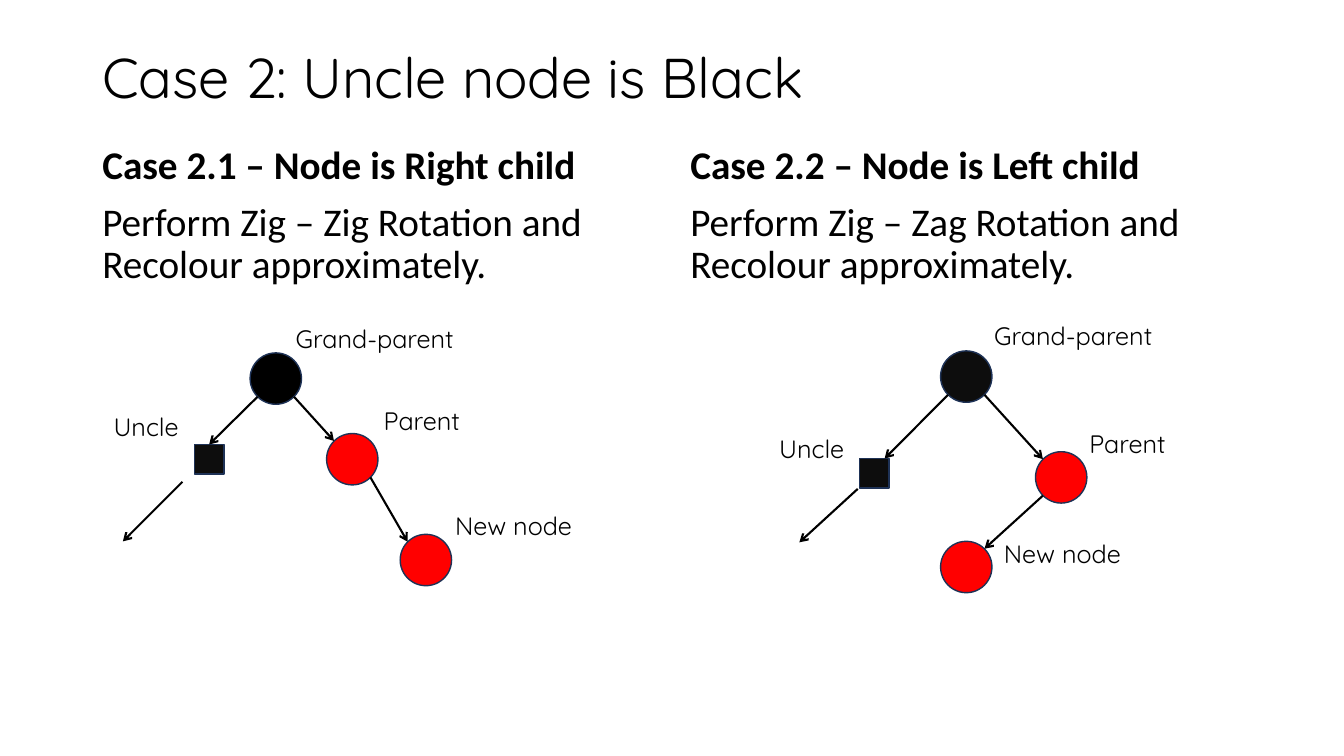
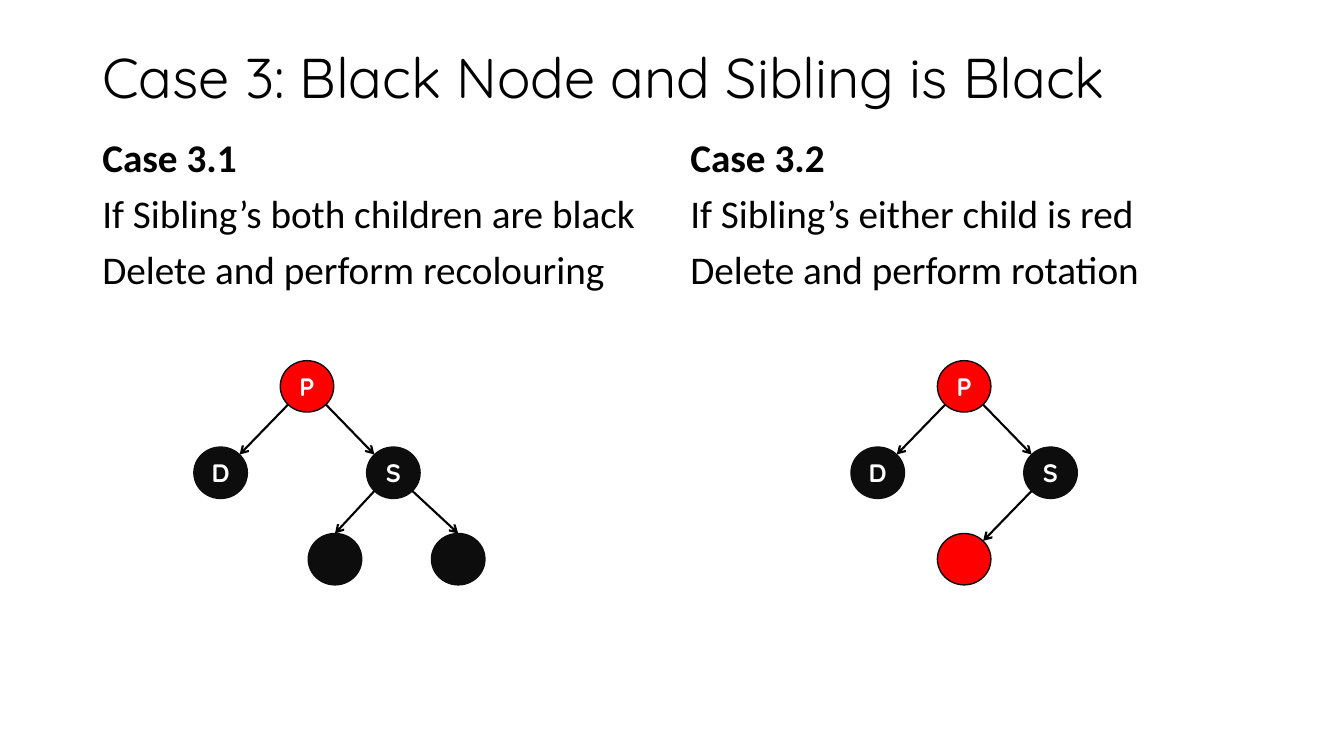
from lxml.etree import SubElement
from pptx import Presentation
from pptx.dml.color import RGBColor
from pptx.enum.shapes import MSO_CONNECTOR, MSO_SHAPE
from pptx.enum.text import MSO_ANCHOR, PP_ALIGN
from pptx.oxml.ns import qn
from pptx.util import Pt

COLORS = {"black": "000000", "ink": "0D0D0D", "red": "FF0000",
          "navy": "1E3256", "white": "FFFFFF"}
FONTS = {
    "title": {"name": "Quicksand", "size": Pt(40)},
    "head": {"name": "Calibri", "size": Pt(28), "bold": True},
    "body": {"name": "Calibri", "size": Pt(28), "bold": False},
    "label": {"name": "Quicksand", "size": Pt(18)},
    "letter": {"name": "Quicksand", "size": Pt(18), "bold": True},
}
COLUMNS = (66, 486)
COLUMN_WIDTH = 408
TREE_TOP = 216

# Where an arrow meets a node, in half sizes from its centre
SITES = {"N": (0, -1), "NNE": (0.7, -1), "NW": (-0.71, -0.71), "NE": (0.71, -0.71),
         "SW": (-0.71, 0.71), "SE": (0.71, 0.71)}
CIRCLE, SQUARE = (36.7, 36.7), (21, 21)
OVAL = (38.2, 36.7)
LABELS = {"grand": ("Grand-parent", 148), "parent": ("Parent", 114),
          "new": ("New node", 114), "uncle": ("Uncle", 95)}


def rgb(color):
    return RGBColor.from_string(COLORS[color])


def style(item, font, color="black", **layout):
    for key, value in layout.items():
        setattr(item, key, value)
    for key, value in FONTS[font].items():
        setattr(item.font, key, value)
    item.font.color.rgb = rgb(color)


def add_text(slide, box, lines, anchor=MSO_ANCHOR.TOP, **layout):
    """Place (text, font) lines in a box of left, top, width and height."""
    frame = slide.shapes.add_textbox(*map(Pt, box)).text_frame
    frame.word_wrap = True
    frame.vertical_anchor = anchor
    for i, (text, font) in enumerate(lines):
        line = frame.add_paragraph() if i else frame.paragraphs[0]
        line.text = text
        style(line, font, **layout)
        if i:
            line.space_before = Pt(10)


def add_node(slide, center, size, fill, edge, letter=""):
    (x, y), (w, h) = center, size
    kind = MSO_SHAPE.RECTANGLE if size == SQUARE else MSO_SHAPE.OVAL
    node = slide.shapes.add_shape(kind, Pt(x - w / 2), Pt(y - h / 2), Pt(w), Pt(h))
    node.shadow.inherit = False
    node.fill.solid()
    node.fill.fore_color.rgb = rgb(fill)
    node.line.color.rgb = rgb(edge)
    node.line.width = Pt(1)
    if letter:
        frame = node.text_frame
        for side in ("left", "top", "right", "bottom"):
            setattr(frame, f"margin_{side}", 0)
        frame.vertical_anchor = MSO_ANCHOR.MIDDLE
        frame.paragraphs[0].text = letter
        style(frame.paragraphs[0], "letter", "white", alignment=PP_ALIGN.CENTER)


def add_arrow(slide, start, end):
    line = slide.shapes.add_connector(MSO_CONNECTOR.STRAIGHT, *map(Pt, (*start, *end)))
    line.line.color.rgb = rgb("black")
    line.line.width = Pt(1.5)
    SubElement(line.line._get_or_add_ln(), qn("a:tailEnd"), type="arrow")
    SubElement(line._element.spPr, qn("a:effectLst"))


def add_tree(slide, left, top, nodes, links, edge):
    """Draw nodes {name: (x, y, size, fill, letter)} and the arrows between them."""
    def site(name, side):
        x, y, (w, h), *_ = nodes[name]
        dx, dy = SITES[side]
        return left + x + dx * w / 2, top + y + dy * h / 2

    for x, y, size, fill, letter in nodes.values():
        add_node(slide, (left + x, top + y), size, fill, edge, letter)
    for begin, out, end, into in links:
        add_arrow(slide, site(begin, out), site(end, into))


def insert_tree(slide, left, top, spots, links, loose):
    """Draw a labelled tree from {name: (x, y, fill, label x, label y)}."""
    nodes = {name: (x, y, SQUARE if name == "uncle" else CIRCLE, fill, "")
             for name, (x, y, fill, *_) in spots.items()}
    add_tree(slide, left, top, nodes, links, "navy")
    x, y, dx, dy = loose
    add_arrow(slide, (left + x, top + y), (left + x + dx, top + y + dy))
    for name, (*_, x, y) in spots.items():
        text, width = LABELS[name]
        add_text(slide, (left + x, top + y, width, 29), [(text, "label")])


def delete_tree(slide, left, top, apex, leaves):
    """Draw P, D and S, with leaves (offset from apex, fill, arrow site) below S."""
    step = 61.7
    nodes = {"P": (apex, 60, OVAL, "red", "P"),
             "D": (apex - step, 60 + step, OVAL, "ink", "D"),
             "S": (apex + step, 60 + step, OVAL, "ink", "S")}
    links = [("P", "SW", "D", "NW" if apex < 0 else "NE"), ("P", "SE", "S", "NW")]
    for i, (shift, fill, into) in enumerate(leaves):
        nodes[i] = (apex + shift, 60 + 2 * step, OVAL, fill, "")
        links.append(("S", "SW" if shift < step else "SE", i, into))
    add_tree(slide, left, top, nodes, links, "ink")


def add_slide(deck, title, body_top, draw, cases):
    """Add a title and two columns, each with text lines and a tree."""
    slide = deck.slides.add_slide(deck.slide_layouts[6])
    add_text(slide, (COLUMNS[0], 28.8, 828, 57), [(title, "title")],
             MSO_ANCHOR.MIDDLE, line_spacing=0.9)
    for left, (head, body, tree) in zip(COLUMNS, cases):
        lines = [(head, "head"), *((text, "body") for text in body)]
        add_text(slide, (left, body_top, COLUMN_WIDTH, 486 - body_top), lines,
                 line_spacing=0.9)
        draw(slide, left, TREE_TOP, *tree)


ZIG_ZIG = (
    {"grand": (131, 54.4, "black", 138, 11.5), "parent": (185.6, 112, "red", 201, 70),
     "new": (238.2, 184, "red", 252, 145), "uncle": (83.4, 112, "ink", 8, 74)},
    [("grand", "SE", "parent", "NW"), ("parent", "SE", "new", "NW"),
     ("grand", "SW", "uncle", "N")],
    (64.3, 128.2, -42.5, 42.5))
ZIG_ZAG = (
    {"grand": (204.2, 53, "ink", 217, 9.5), "parent": (272, 125, "red", 285, 86.5),
     "new": (204.2, 189, "red", 224, 165), "uncle": (138.6, 122, "ink", 63.4, 90)},
    [("grand", "SE", "parent", "NW"), ("parent", "SW", "new", "NE"),
     ("grand", "SW", "uncle", "NNE")],
    (126.7, 133.2, -41.7, 38.2))


def main():
    deck = Presentation()
    deck.slide_width, deck.slide_height = Pt(960), Pt(540)
    add_slide(deck, "Case 2: Uncle node is Black", 100.8, insert_tree, [
        ("Case 2.1 – Node is Right child",
         ["Perform Zig – Zig Rotation and Recolour approximately."], ZIG_ZIG),
        ("Case 2.2 – Node is Left child",
         ["Perform Zig – Zag Rotation and Recolour approximately."], ZIG_ZAG)])
    add_slide(deck, "Case 3: Black Node and Sibling is Black", 95.3, delete_tree, [
        ("Case 3.1", ["If Sibling’s both children are black",
                      "Delete and perform recolouring"],
         (153.3, [(20, "ink", "N"), (108, "ink", "N")])),
        ("Case 3.2", ["If Sibling’s either child is red",
                      "Delete and perform rotation"],
         (202.7, [(0, "red", "NE")]))])
    deck.save("out.pptx")


if __name__ == "__main__":
    main()
